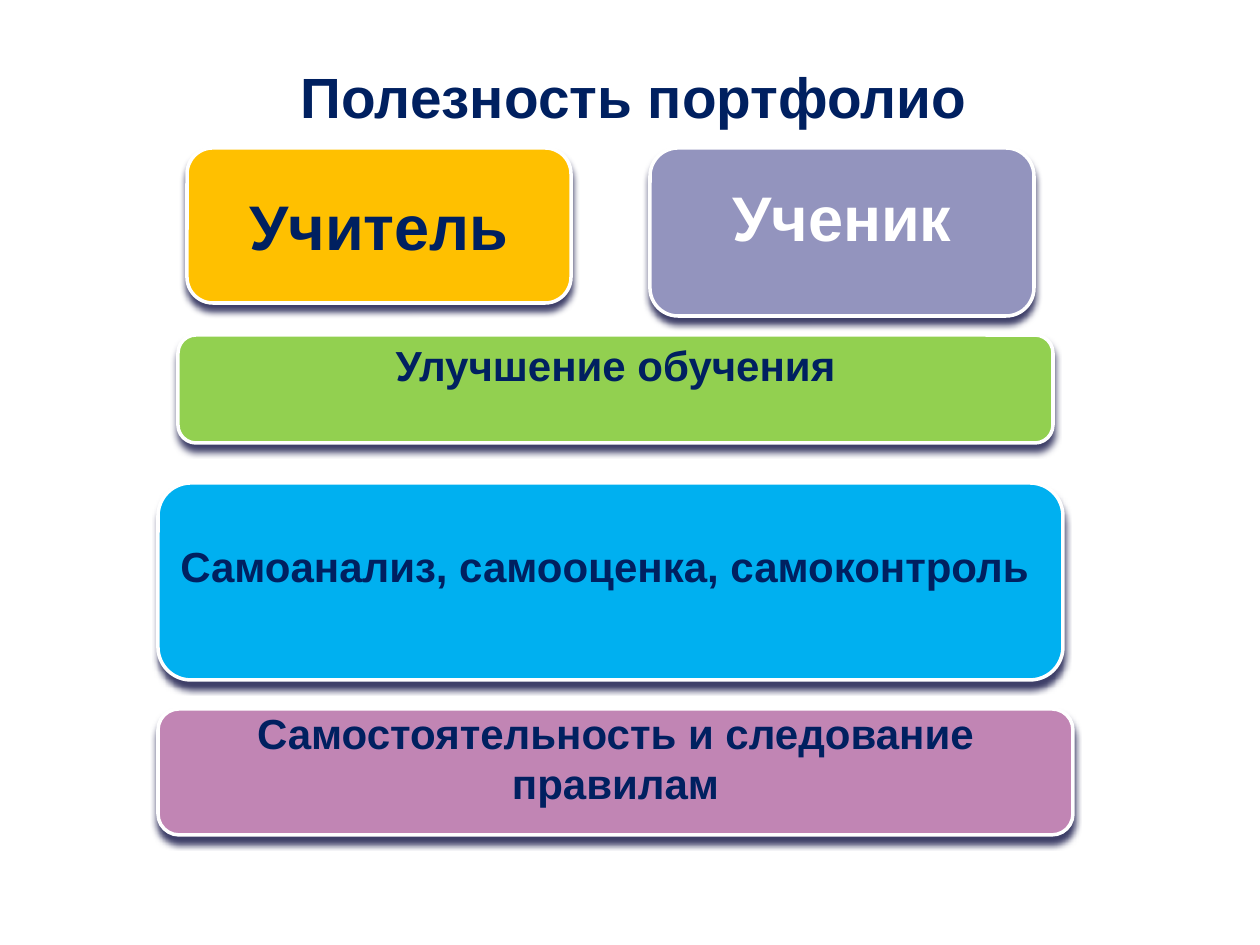
from pptx import Presentation
from pptx.dml.color import RGBColor
from pptx.enum.shapes import MSO_SHAPE as Kind
from pptx.enum.text import MSO_ANCHOR as Anchor, PP_ALIGN as Align
from pptx.oxml import parse_xml
from pptx.oxml.ns import nsdecls
from pptx.util import Pt

PX = 914400 // 126
NAVY = "002060"
WHITE = "FFFFFF"
SHADE = f"""<a:effectLst {nsdecls("a")}>
<a:outerShdw blurRad="50800" dist="50800" dir="5400000" rotWithShape="0">
<a:srgbClr val="3E3F68"/></a:outerShdw></a:effectLst>"""


def tint(code):
    return RGBColor.from_string(code)


def write(shape, text, size, color, pads):
    frame = shape.text_frame
    look = {"word_wrap": True, "vertical_anchor": Anchor.MIDDLE,
            "margin_top": pads[0] * PX, "margin_bottom": pads[1] * PX}
    for key, val in look.items():
        setattr(frame, key, val)
    frame.text = text
    para = frame.paragraphs[0]
    para.alignment = Align.CENTER
    font = para.runs[0].font
    for key, val in {"name": "Arial", "size": Pt(size), "bold": True}.items():
        setattr(font, key, val)
    font.color.rgb = tint(color)


deck = Presentation()
deck.slide_width = 1260 * PX
deck.slide_height = 945 * PX
slide = deck.slides.add_slide(deck.slide_layouts[5])

title = slide.shapes.title
place = {"left": 98, "top": 59, "width": 1071, "height": 73}
for key, val in place.items():
    setattr(title, key, val * PX)
write(title, "Полезность портфолио", 32.4, NAVY, (6, 6))

boxes = [
    ("Учитель", (187, 148, 384, 155), "FFC000", 36, NAVY, (6, 6)),
    ("Улучшение обучения", (178, 335, 875, 108), "92D050", 24, NAVY, (6, 54)),
    ("Самостоятельность и следование правилам", (158, 709, 915, 126),
     "C185B4", 24, NAVY, (0, 28)),
    ("Самоанализ, самооценка, самоконтроль ", (158, 483, 905, 197),
     "00B0F0", 24, NAVY, (6, 38)),
    ("Ученик", (650, 148, 384, 168), "9394BE", 36, WHITE, (6, 38)),
]
for text, spot, fill, size, color, pads in boxes:
    box = slide.shapes.add_shape(Kind.ROUNDED_RECTANGLE, *(n * PX for n in spot))
    box.fill.solid()
    box.fill.fore_color.rgb = tint(fill)
    box.line.color.rgb = tint(WHITE)
    box.line.width = Pt(2)
    box.element.spPr.append(parse_xml(SHADE))
    write(box, text, size, color, pads)

deck.save("out.pptx")
